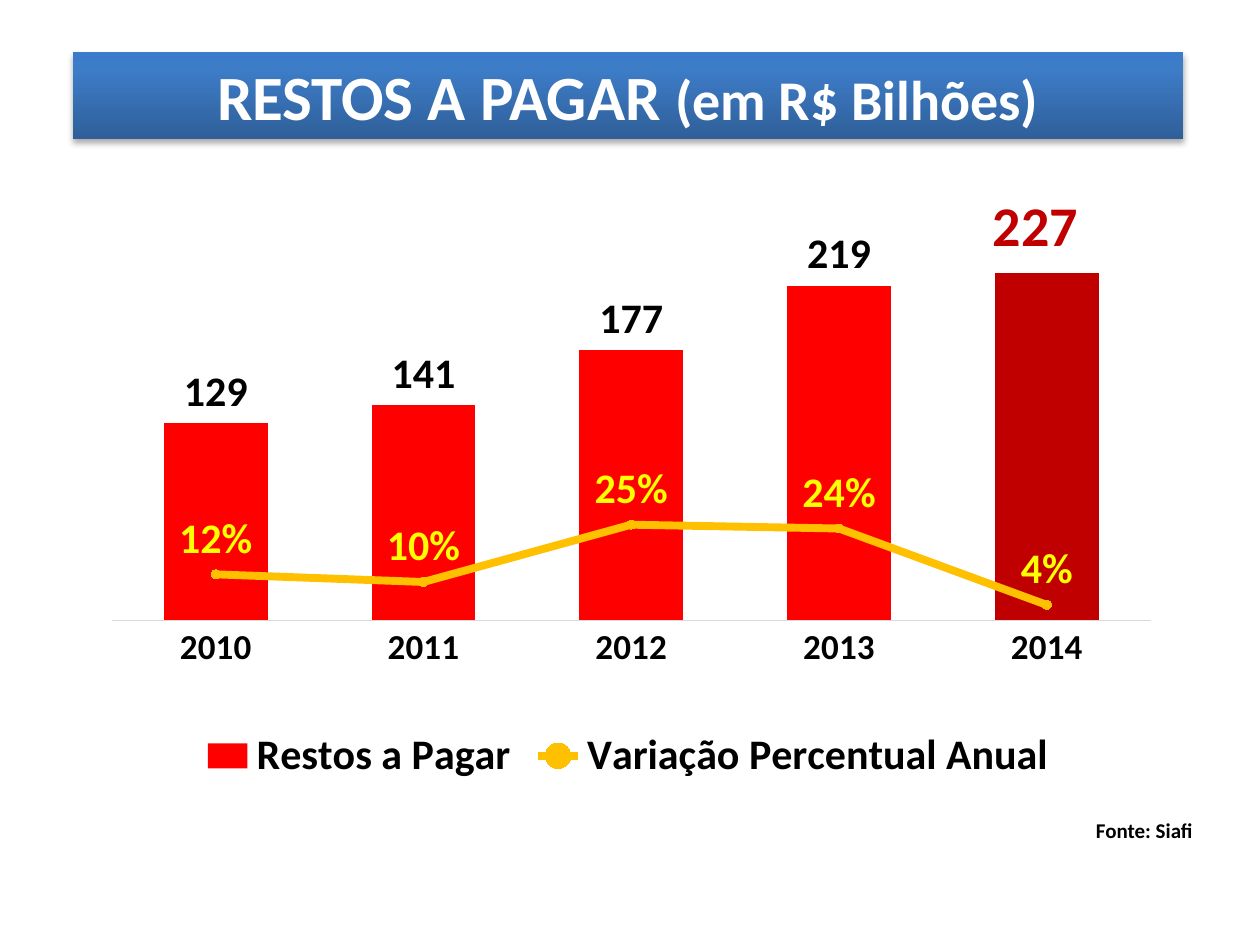
from pptx import Presentation
from pptx.chart.data import CategoryChartData
from pptx.dml.color import RGBColor
from pptx.enum.chart import (XL_CHART_TYPE, XL_LABEL_POSITION, XL_LEGEND_POSITION,
                             XL_MARKER_STYLE, XL_TICK_LABEL_POSITION, XL_TICK_MARK)
from pptx.enum.text import MSO_ANCHOR, PP_ALIGN
from pptx.oxml import parse_xml
from pptx.oxml.ns import nsdecls
from pptx.util import Pt

COLUMNS = XL_CHART_TYPE.COLUMN_CLUSTERED
OUTSIDE_END, ABOVE = XL_LABEL_POSITION.OUTSIDE_END, XL_LABEL_POSITION.ABOVE
BOTTOM = XL_LEGEND_POSITION.BOTTOM
CIRCLE = XL_MARKER_STYLE.CIRCLE
NO_LABELS = XL_TICK_LABEL_POSITION.NONE
NO_TICKS = XL_TICK_MARK.NONE
CENTER, JUSTIFY = PP_ALIGN.CENTER, PP_ALIGN.JUSTIFY
MIDDLE = MSO_ANCHOR.MIDDLE

EMU_PER_PX = 914400 / 126
FONT = "Calibri"
BLACK, WHITE, RED, DARK_RED = "000000", "FFFFFF", "FF0000", "C00000"
AMBER, YELLOW, GREY = "FFC000", "FFFF00", "D9D9D9"
BANNER_STOPS = [(0, "2F5F99"), (80, "3D7CC7"), (100, "3A7CCB")]

YEARS = ["2010", "2011", "2012", "2013", "2014"]
AMOUNTS = [129, 141, 177, 219, 227]
CHANGES = [0.12, 0.10, 0.25, 0.24, 0.04]


def px(length):
    return round(length * EMU_PER_PX)


def rgb(color):
    return RGBColor.from_string(color)


def set_all(target, values):
    for name, value in values.items():
        setattr(target, name, value)


def style_font(font, size, color):
    set_all(font, {"name": FONT, "size": Pt(size), "bold": True})
    font.color.rgb = rgb(color)


def paint(fill, color):
    fill.solid()
    fill.fore_color.rgb = rgb(color)


def manual_layout(x, y, extra=""):
    return parse_xml(
        f'<c:layout {nsdecls("c")}><c:manualLayout>{extra}'
        f'<c:x val="{x}"/><c:y val="{y}"/></c:manualLayout></c:layout>')


def add_banner(slide, box):
    title = slide.shapes.title
    set_all(title, dict(zip(("left", "top", "width", "height"), map(px, box))))
    stops = "".join(f'<a:gs pos="{pos * 1000}"><a:srgbClr val="{color}"/></a:gs>'
                    for pos, color in BANNER_STOPS)
    for xml in (
        f'<a:prstGeom {nsdecls("a")} prst="rect"><a:avLst/></a:prstGeom>',
        f'<a:gradFill {nsdecls("a")} rotWithShape="1"><a:gsLst>{stops}</a:gsLst>'
        '<a:lin ang="16200000" scaled="0"/></a:gradFill>',
        f'<a:effectLst {nsdecls("a")}><a:outerShdw blurRad="{Pt(3.5)}" dist="{Pt(2.2)}" '
        'dir="5400000" rotWithShape="0"><a:srgbClr val="000000"><a:alpha val="32000"/>'
        '</a:srgbClr></a:outerShdw></a:effectLst>',
    ):
        title._element.spPr.append(parse_xml(xml))
    frame = title.text_frame
    set_all(frame, {"vertical_anchor": MIDDLE, "word_wrap": True})
    heading = frame.paragraphs[0]
    heading.alignment = CENTER
    for text, size in (("RESTOS A PAGAR ", 36), ("(em R$ Bilhões)", 32)):
        run = heading.add_run()
        run.text = text
        style_font(run.font, size, WHITE)


def move_to_secondary_line(chart):
    """Turn the second column series into a line on a hidden 0-100% axis."""
    columns = chart.plots[0]._element
    series = chart.plots[0].series[1]._element
    for flag in series.xpath("c:invertIfNegative"):
        series.remove(flag)
    line = parse_xml(
        f'<c:lineChart {nsdecls("c")}><c:grouping val="standard"/><c:varyColors val="0"/>'
        '<c:marker val="1"/><c:axId val="5001"/><c:axId val="5002"/></c:lineChart>')
    line.insert(2, series)
    columns.addnext(line)

    def axis(tag, axis_id, cross_id, deleted, scale, position, crosses):
        return parse_xml(
            f'<c:{tag} {nsdecls("c")}><c:axId val="{axis_id}"/>'
            f'<c:scaling><c:orientation val="minMax"/>{scale}</c:scaling>'
            f'<c:delete val="{deleted}"/><c:axPos val="{position}"/>'
            '<c:numFmt formatCode="0%" sourceLinked="0"/>'
            '<c:majorTickMark val="none"/><c:minorTickMark val="none"/>'
            '<c:tickLblPos val="none"/>'
            f'<c:spPr><a:ln {nsdecls("a")}><a:noFill/></a:ln></c:spPr>'
            f'<c:crossAx val="{cross_id}"/><c:crosses val="{crosses}"/></c:{tag}>')

    percent_axis = axis("valAx", 5002, 5001, 0, '<c:max val="1"/><c:min val="0"/>', "r", "max")
    chart.value_axis._element.addnext(percent_axis)
    percent_axis.addnext(axis("catAx", 5001, 5002, 1, "", "b", "autoZero"))


def style_axes(chart):
    years, amounts = chart.category_axis, chart.value_axis
    for axis in (years, amounts):
        set_all(axis, {"major_tick_mark": NO_TICKS, "minor_tick_mark": NO_TICKS,
                       "has_major_gridlines": False})
    style_font(years.tick_labels.font, 20, BLACK)
    years.format.line.color.rgb = rgb(GREY)
    years.format.line.width = Pt(0.75)
    set_all(amounts, {"minimum_scale": 0, "maximum_scale": 250,
                      "tick_label_position": NO_LABELS})
    amounts.format.line.fill.background()


def style_labels(series, color, position, number_format):
    labels = series.data_labels
    set_all(labels, {"show_value": True, "position": position,
                     "number_format": number_format, "number_format_is_linked": False})
    style_font(labels.font, 24, color)


def add_debt_chart(slide, box):
    data = CategoryChartData()
    data.categories = YEARS
    data.add_series("Restos a Pagar", AMOUNTS, "0")
    data.add_series("Variação Percentual Anual", CHANGES, "0%")
    chart = slide.shapes.add_chart(COLUMNS, *map(px, box), data).chart
    set_all(chart, {"has_title": False, "has_legend": True})
    set_all(chart.legend, {"position": BOTTOM, "include_in_layout": False})
    set_all(chart.font, {"name": FONT, "size": Pt(10)})
    style_font(chart.legend.font, 24, BLACK)
    style_axes(chart)
    move_to_secondary_line(chart)

    plot_area = chart.plots[0]._element.getparent()
    for layout in plot_area.xpath("c:layout"):
        plot_area.remove(layout)
    inner = manual_layout(0.035, 0.106, '<c:layoutTarget val="inner"/>'
                          '<c:xMode val="edge"/><c:yMode val="edge"/>')
    for tag, size in (("w", 0.936), ("h", 0.619)):
        inner[0].append(parse_xml(f'<c:{tag} {nsdecls("c")} val="{size}"/>'))
    plot_area.insert(0, inner)

    columns, line = chart.plots
    set_all(columns, {"gap_width": 100, "vary_by_categories": False})
    debt, change = columns.series[0], line.series[0]
    paint(debt.format.fill, RED)
    style_labels(debt, BLACK, OUTSIDE_END, "0")
    latest = debt.points[len(YEARS) - 1]
    paint(latest.format.fill, DARK_RED)
    style_font(latest.data_label.font, 32, DARK_RED)
    latest.data_label.position = OUTSIDE_END
    debt._element.xpath("c:dLbls/c:dLbl/c:idx")[0].addnext(manual_layout(-0.01, -0.01))

    change.smooth = False
    change.format.line.color.rgb = rgb(AMBER)
    change.format.line.width = Pt(4.5)
    set_all(change.marker, {"style": CIRCLE, "size": 5})
    paint(change.marker.format.fill, AMBER)
    change.marker.format.line.color.rgb = rgb(AMBER)
    style_labels(change, YELLOW, ABOVE, "0%")


def add_source_note(slide, box):
    frame = slide.shapes.add_textbox(*map(px, box)).text_frame
    set_all(frame, {"word_wrap": True, "vertical_anchor": MIDDLE,
                    "margin_left": px(9), "margin_right": px(9),
                    "margin_top": px(5), "margin_bottom": px(5)})
    note = frame.paragraphs[0]
    note.text = "Fonte: Siafi"
    note.alignment = JUSTIFY
    style_font(note.runs[0].font, 12, BLACK)


def main():
    deck = Presentation()
    set_all(deck, {"slide_width": px(1260), "slide_height": px(945)})
    slide = deck.slides.add_slide(deck.slide_layouts[5])
    add_debt_chart(slide, (73, 173, 1110, 617))
    add_banner(slide, (73, 52, 1110, 87))
    add_source_note(slide, (1087, 813, 127, 35))
    deck.save("out.pptx")


if __name__ == "__main__":
    main()
